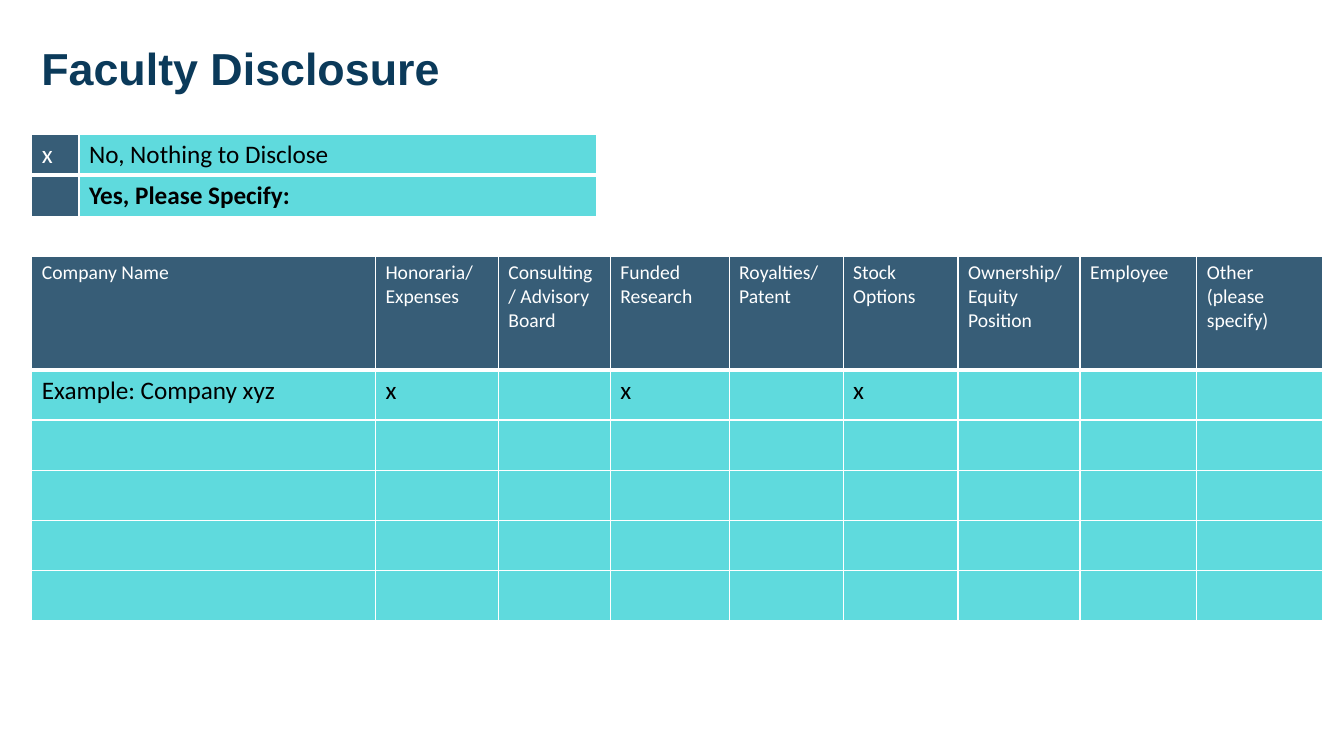
"""Build the faculty disclosure slide."""
from lxml.etree import SubElement
from pptx import Presentation
from pptx.dml.color import RGBColor
from pptx.enum.text import MSO_ANCHOR, PP_ALIGN
from pptx.oxml.ns import qn
from pptx.util import Pt

NAVY = RGBColor(0x0B, 0x3A, 0x5A)
TEAL = RGBColor(0x22, 0xCC, 0xD0)
WHITE = RGBColor(0xFF, 0xFF, 0xFF)
BLACK = RGBColor(0, 0, 0)
ALPHA = {NAVY: 82, TEAL: 72}
INK = {NAVY: WHITE, TEAL: BLACK}


class Deck:
    def __init__(self):
        self.prs = Presentation()
        self.prs.slide_width, self.prs.slide_height = Pt(960), Pt(540)
        self.slide = self.prs.slides.add_slide(self.prs.slide_layouts[5])

    def run(self, p, text, size, color, bold=False, font="Calibri"):
        r = p.add_run()
        r.text = text
        r.font.name, r.font.size, r.font.bold = font, Pt(size), bold
        r.font.color.rgb = color

    def title(self, text, x, y, w, h):
        sp = self.slide.shapes.title
        sp.left, sp.top, sp.width, sp.height = Pt(x), Pt(y), Pt(w), Pt(h)
        tf = sp.text_frame
        tf.word_wrap = True
        tf.vertical_anchor = MSO_ANCHOR.MIDDLE
        p = tf.paragraphs[0]
        p.alignment, p.line_spacing = PP_ALIGN.LEFT, 0.9
        self.run(p, text, 32, NAVY, True, "Arial")

    def cell(self, cell, text, fill, size, bold, bottom):
        tcPr = cell._tc.get_or_add_tcPr()
        for side, width in (("L", 1), ("R", 1), ("T", 1), ("B", bottom)):
            ln = SubElement(tcPr, qn(f"a:ln{side}"), w=str(Pt(width)))
            solid = SubElement(ln, qn("a:solidFill"))
            SubElement(solid, qn("a:srgbClr"), val=str(WHITE))
        cell.fill.solid()
        cell.fill.fore_color.rgb = fill
        clr = tcPr.find(qn("a:solidFill")).find(qn("a:srgbClr"))
        SubElement(clr, qn("a:alpha"), val=str(ALPHA[fill] * 1000))
        tf = cell.text_frame
        for i, line in enumerate(text.split("\n") if text else []):
            p = tf.add_paragraph() if i else tf.paragraphs[0]
            self.run(p, line, size, INK[fill], bold)

    def table(self, x, y, widths, heights, rows, style):
        shape = self.slide.shapes.add_table(
            len(rows), len(widths), Pt(x), Pt(y), Pt(sum(widths)), Pt(sum(heights)))
        tbl = shape.table
        tbl.first_row = tbl.horz_banding = False
        for col, width in zip(tbl.columns, widths):
            col.width = Pt(width)
        for i, (row, height) in enumerate(zip(rows, heights)):
            tbl.rows[i].height = Pt(height)
            for j, text in enumerate(row):
                self.cell(tbl.cell(i, j), text, *style(i, j), 1 if i else 3)


def answer_style(row, col):
    return (TEAL if col else NAVY), 18, row == 1


def company_style(row, col):
    return (TEAL, 18, False) if row else (NAVY, 14, False)


def main():
    deck = Deck()
    deck.title("Faculty Disclosure", 22.3, 18.7, 795, 63.4)
    answers = [["x", "No, Nothing to Disclose"], ["", "Yes, Please Specify:"]]
    deck.table(22.7, 96, [33.8, 369.5], [28.8] * 2, answers, answer_style)

    headings = ["Company Name", "Honoraria/\nExpenses", "Consulting/ Advisory Board",
                "Funded Research", "Royalties/ Patent", "Stock Options",
                "Ownership/ Equity Position", "Employee", "Other\n(please specify)"]
    example = ["Example: Company xyz", "x", "", "x", "", "x", "", "", ""]
    blanks = [[""] * len(headings)] * 4
    widths = [245.5, 87.8, 79.9, 85, 81.4, 82.1, 87.1, 83.5, 90]
    deck.table(22.7, 182.9, widths, [81.4] + [35.8] * 5,
               [headings, example, *blanks], company_style)
    deck.prs.save("out.pptx")


if __name__ == "__main__":
    main()
